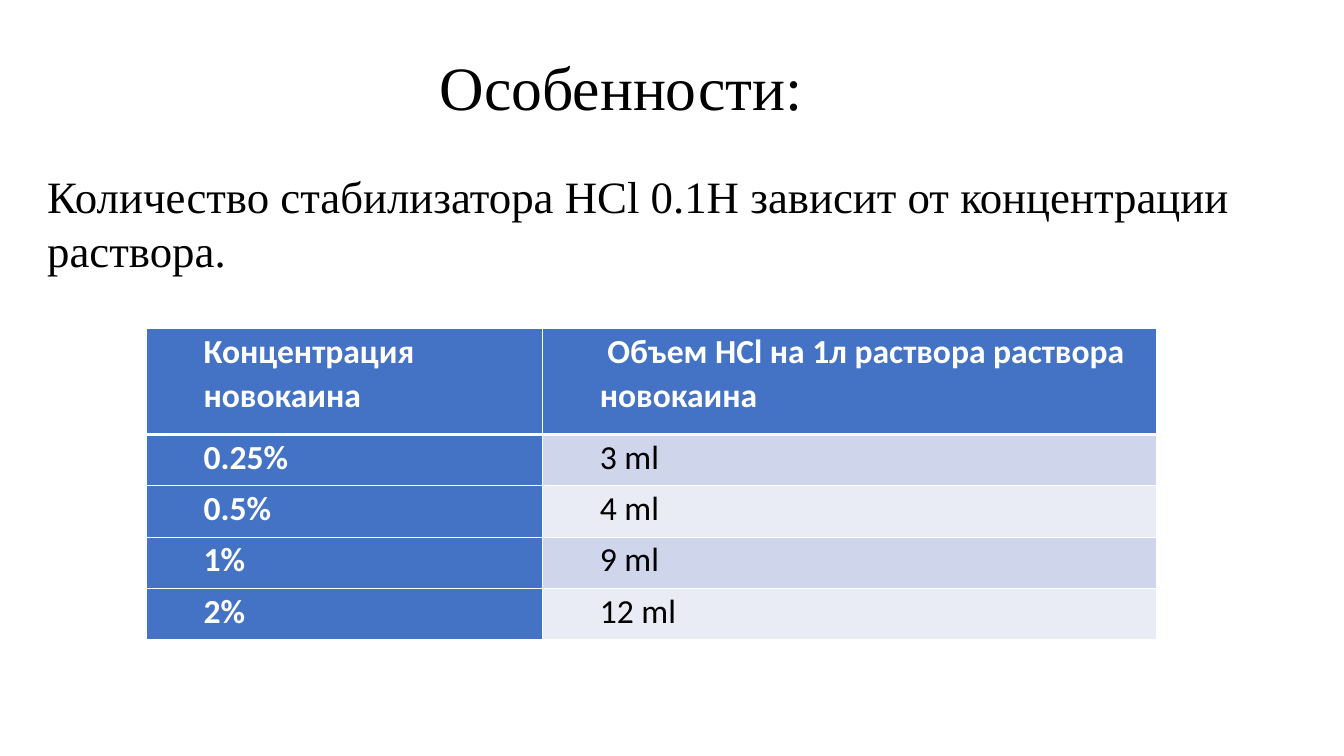
from dataclasses import dataclass

from pptx import Presentation
from pptx import util as u
from pptx.dml.color import RGBColor
from pptx.enum import text
from pptx.oxml import parse_xml
from pptx.oxml.ns import nsdecls

EMU_PER_PX = 9144


@dataclass(frozen=True)
class Theme:
    black: str = "000000"
    white: str = "FFFFFF"
    accent: str = "4472C4"
    bands: tuple[str, str] = ("CFD5EA", "E9EBF5")
    serif: str = "Times New Roman"
    sans: str = "Calibri"
    title_size: int = 44
    body_size: int = 32
    table_size: int = 24


@dataclass(frozen=True)
class Box:
    left: int
    top: int
    width: int
    height: int

    def emu(self) -> tuple[u.Emu, ...]:
        return tuple(px(value) for value in (self.left, self.top, self.width, self.height))


@dataclass(frozen=True)
class Dose:
    concentration: str
    volume: str


THEME = Theme()
TITLE_BOX = Box(426, 17, 416, 145)
BODY_BOX = Box(37, 162, 1193, 118)
TABLE_BOX = Box(145, 326, 1002, 309)
COLUMN_WIDTHS = (393, 609)
HEADER_HEIGHT = 105
ROW_HEIGHT = 51
CELL_INSET = 7
CELL_INDENT = 50
HEADER = Dose("Концентрация новокаина", " Объем HCl на 1л раствора раствора новокаина")
DOSES = (
    Dose("0.25%", "3 ml"),
    Dose("0.5%", "4 ml"),
    Dose("1%", "9 ml"),
    Dose("2%", "12 ml"),
)


def px(value: int) -> u.Emu:
    return u.Emu(value * EMU_PER_PX)


def write(frame, content: str, *, size: int, font: str, color: str, bold: bool = False,
          spacing: float = 1.0, after: int = 0, indent: int = 0) -> None:
    frame.word_wrap = True
    paragraph = frame.paragraphs[0]
    paragraph.alignment = text.PP_ALIGN.LEFT
    paragraph.line_spacing = spacing
    paragraph.space_before = u.Pt(0)
    paragraph.space_after = u.Pt(after)
    if indent:
        properties = paragraph._p.get_or_add_pPr()
        properties.set("marL", str(px(indent)))
        properties.set("indent", "0")
    run = paragraph.add_run()
    run.text = content
    run.font.size = u.Pt(size)
    run.font.name = font
    run.font.bold = bold
    run.font.color.rgb = RGBColor.from_string(color)


def add_borders(cell, top: int, bottom: int) -> None:
    properties = cell._tc.get_or_add_tcPr()
    for side, points in (("L", 1), ("R", 1), ("T", top), ("B", bottom)):
        properties.append(parse_xml(
            f'<a:ln{side} {nsdecls("a")} w="{u.Pt(points)}"><a:solidFill>'
            f'<a:srgbClr val="{THEME.white}"/></a:solidFill></a:ln{side}>'
        ))


def fill_cell(cell, content: str, row: int, column: int) -> None:
    accented = row == 0 or column == 0
    cell.margin_left = cell.margin_right = px(CELL_INSET)
    cell.margin_top = cell.margin_bottom = px(0)
    add_borders(cell, top=3 if row == 1 else 1, bottom=3 if row == 0 else 1)
    cell.fill.solid()
    fill = THEME.accent if accented else THEME.bands[(row - 1) % 2]
    cell.fill.fore_color.rgb = RGBColor.from_string(fill)
    write(cell.text_frame, content, size=THEME.table_size, font=THEME.sans,
          color=THEME.white if accented else THEME.black, bold=accented,
          spacing=1.07, after=8 * column, indent=CELL_INDENT)


def add_title(slide) -> None:
    title = slide.shapes.title
    title.left, title.top, title.width, title.height = TITLE_BOX.emu()
    title.text_frame.vertical_anchor = text.MSO_ANCHOR.MIDDLE
    write(title.text_frame, "Особенности:", size=THEME.title_size, font=THEME.serif,
          color=THEME.black, spacing=0.9)


def add_dose_table(slide) -> None:
    rows = (HEADER, *DOSES)
    table = slide.shapes.add_table(len(rows), len(COLUMN_WIDTHS), *TABLE_BOX.emu()).table
    table.first_col = True
    for column, width in zip(table.columns, COLUMN_WIDTHS):
        column.width = px(width)
    for index, dose in enumerate(rows):
        table.rows[index].height = px(ROW_HEIGHT if index else HEADER_HEIGHT)
        for column, content in enumerate((dose.concentration, dose.volume)):
            fill_cell(table.cell(index, column), content, index, column)


def add_statement(slide) -> None:
    frame = slide.shapes.add_textbox(*BODY_BOX.emu()).text_frame
    frame.vertical_anchor = text.MSO_ANCHOR.MIDDLE
    frame.auto_size = text.MSO_AUTO_SIZE.SHAPE_TO_FIT_TEXT
    write(frame, "Количество стабилизатора HCl 0.1Н зависит от концентрации раствора.",
          size=THEME.body_size, font=THEME.serif, color=THEME.black)


def main() -> None:
    presentation = Presentation()
    presentation.slide_width = px(1333)
    presentation.slide_height = px(750)
    slide = presentation.slides.add_slide(presentation.slide_layouts[5])
    add_title(slide)
    add_dose_table(slide)
    add_statement(slide)
    presentation.save("out.pptx")


if __name__ == "__main__":
    main()
